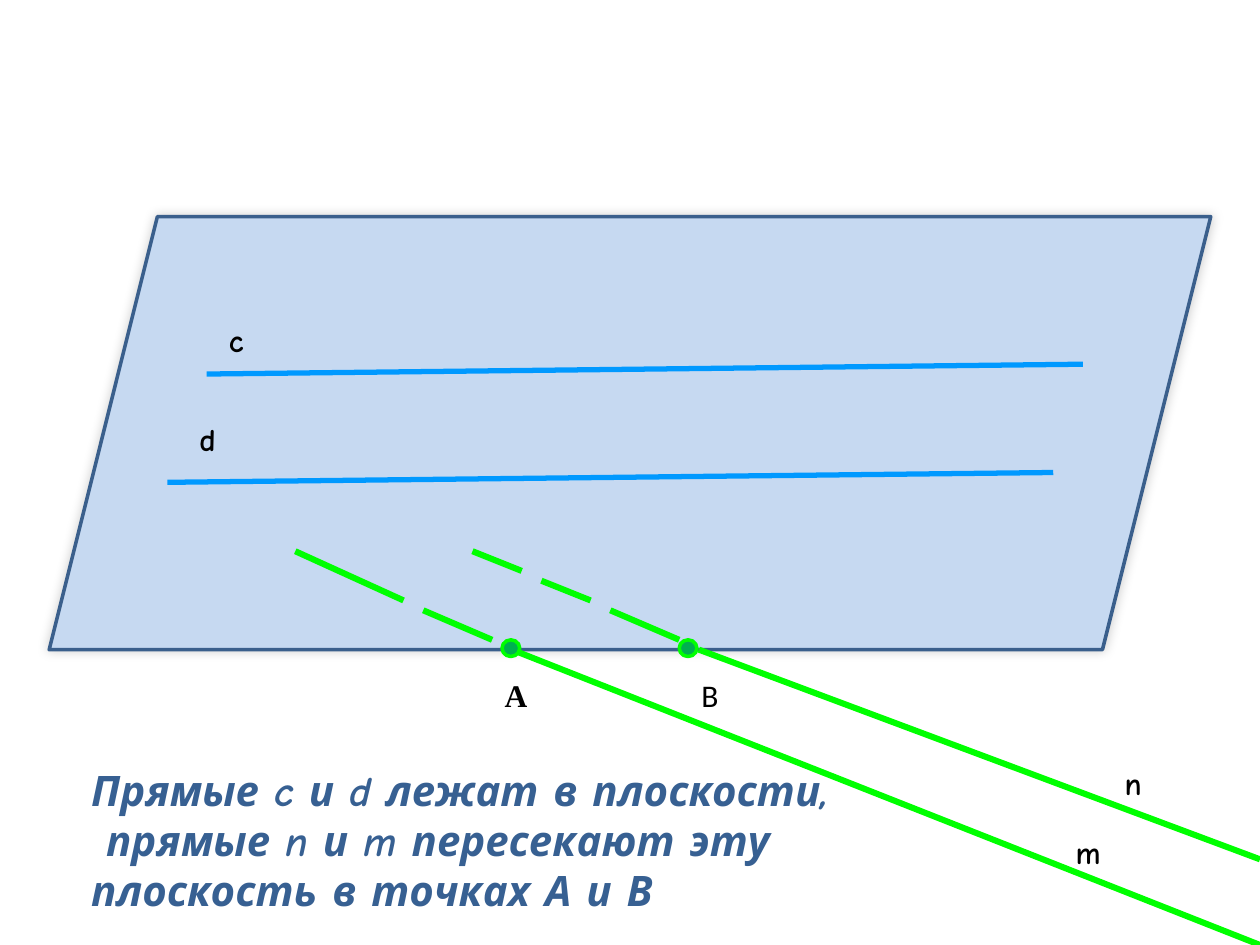
from dataclasses import dataclass

from lxml import etree
from pptx import Presentation
from pptx import util as u
from pptx.dml.color import RGBColor
from pptx.enum import shapes, text
from pptx.oxml.ns import qn


@dataclass(frozen=True)
class Theme:
    plane: str = "C6D9F1"
    edge: str = "3A5F8C"
    inside: str = "0099FF"
    crossing: str = "00FF00"
    dot: str = "00B050"
    shadow: str = "000000"
    label: str = "000000"
    caption: str = "376092"
    font: str = "Comic Neue"
    label_size: int = 18
    caption_size: int = 24


T = Theme()
rgb = RGBColor.from_string

prs = Presentation()
prs.slide_width, prs.slide_height = u.Inches(10), u.Inches(7.5)
s = prs.slides.add_slide(prs.slide_layouts[6])
CELL = prs.slide_width / 128  # the slide is a grid of 128 columns by 96 rows


def grid(*cells):
    return [round(c * CELL) for c in cells]


def add_text(words, box, size=T.label_size, font=T.font, color=T.label,
             bold=True, italic=False, wrap=True):
    tf = s.shapes.add_textbox(*grid(*box)).text_frame
    tf.word_wrap = wrap
    tf.auto_size = text.MSO_AUTO_SIZE.SHAPE_TO_FIT_TEXT
    p = tf.paragraphs[0]
    p.text = words
    for r in p.runs:
        f = r.font
        f.name, f.size, f.bold, f.italic = font, u.Pt(size), bold, italic
        f.color.rgb = rgb(color)


# Plane with a soft shadow
sp = s.shapes.add_shape(shapes.MSO_SHAPE.PARALLELOGRAM, *grid(5, 22, 118, 44))
sp.shadow.inherit = False
sp.fill.solid()
sp.fill.fore_color.rgb = rgb(T.plane)
sp.line.color.rgb = rgb(T.edge)
sp.line.width = u.Pt(2)
effects = sp._element.spPr.find(qn("a:effectLst"))
shadow = etree.SubElement(effects, qn("a:outerShdw"), blurRad=str(u.Pt(6)),
                          dist="0", dir=str(225 * 60000), rotWithShape="0")
clr = etree.SubElement(shadow, qn("a:srgbClr"), val=T.shadow)
etree.SubElement(clr, qn("a:alpha"), val="20000")

# Lines c and d lie in the plane; n and m cross it, dashed behind it
lines = [
    (T.inside, 3, [(21, 38, 110, 37), (17, 49, 107, 48)]),
    (T.crossing, 3.5, [
        (71, 66, 128, 87.3), (52, 66, 128, 96),
        (69, 65, 62, 62), (60, 61, 55, 59), (53, 58, 48, 56),
        (50, 65, 43, 62), (41, 61, 30, 56),
    ]),
]
for color, width, segments in lines:
    for ends in segments:
        c = s.shapes.add_connector(shapes.MSO_CONNECTOR.STRAIGHT, *grid(*ends))
        c.line.color.rgb = rgb(color)
        c.line.width = u.Pt(width)
        etree.SubElement(c._element.spPr, qn("a:effectLst"))

# Points A and B
for col in (51, 69):
    sp = s.shapes.add_shape(shapes.MSO_SHAPE.OVAL, *grid(col, 65, 1.8, 1.7))
    sp.shadow.inherit = False
    sp.fill.solid()
    sp.fill.fore_color.rgb = rgb(T.dot)
    sp.line.color.rgb = rgb(T.crossing)
    sp.line.width = u.Pt(2)

add_text("c", (22, 32, 4.2, 5.1), wrap=False)
add_text("d", (19, 42, 4.5, 5.1), wrap=False)
add_text("А", (50, 68, 5, 5.1), font="Times New Roman")
add_text("B", (70, 68, 6, 5.1), font="Calibri", bold=False)
add_text("n", (113, 77, 4, 5.1))
add_text("m", (108, 84, 6, 5.1))
add_text("Прямые c и d лежат в плоскости,\v прямые n и m пересекают эту "
         "плоскость в точках А и В", (8, 77, 78, 16.8),
         size=T.caption_size, color=T.caption, italic=True)

prs.save("out.pptx")
